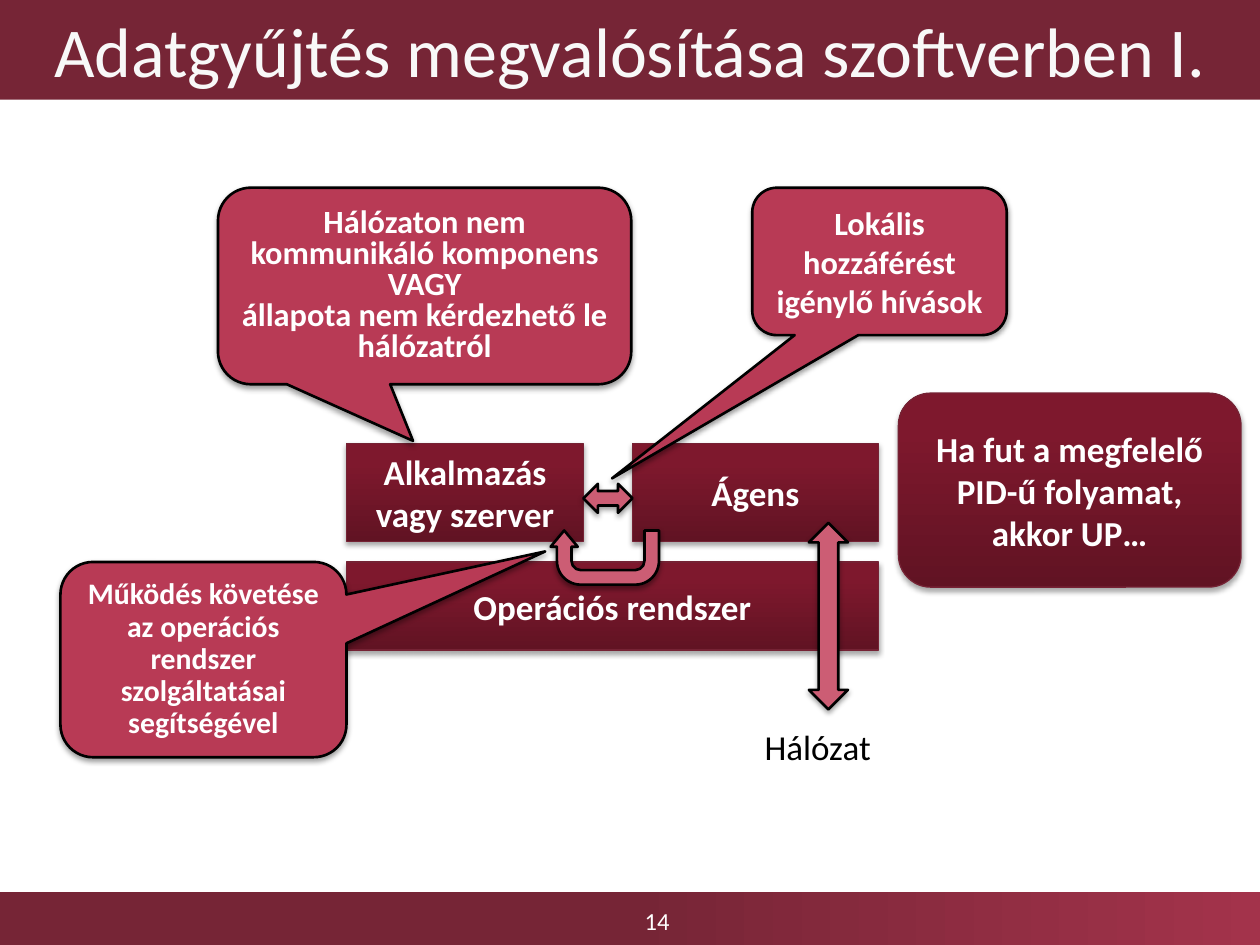
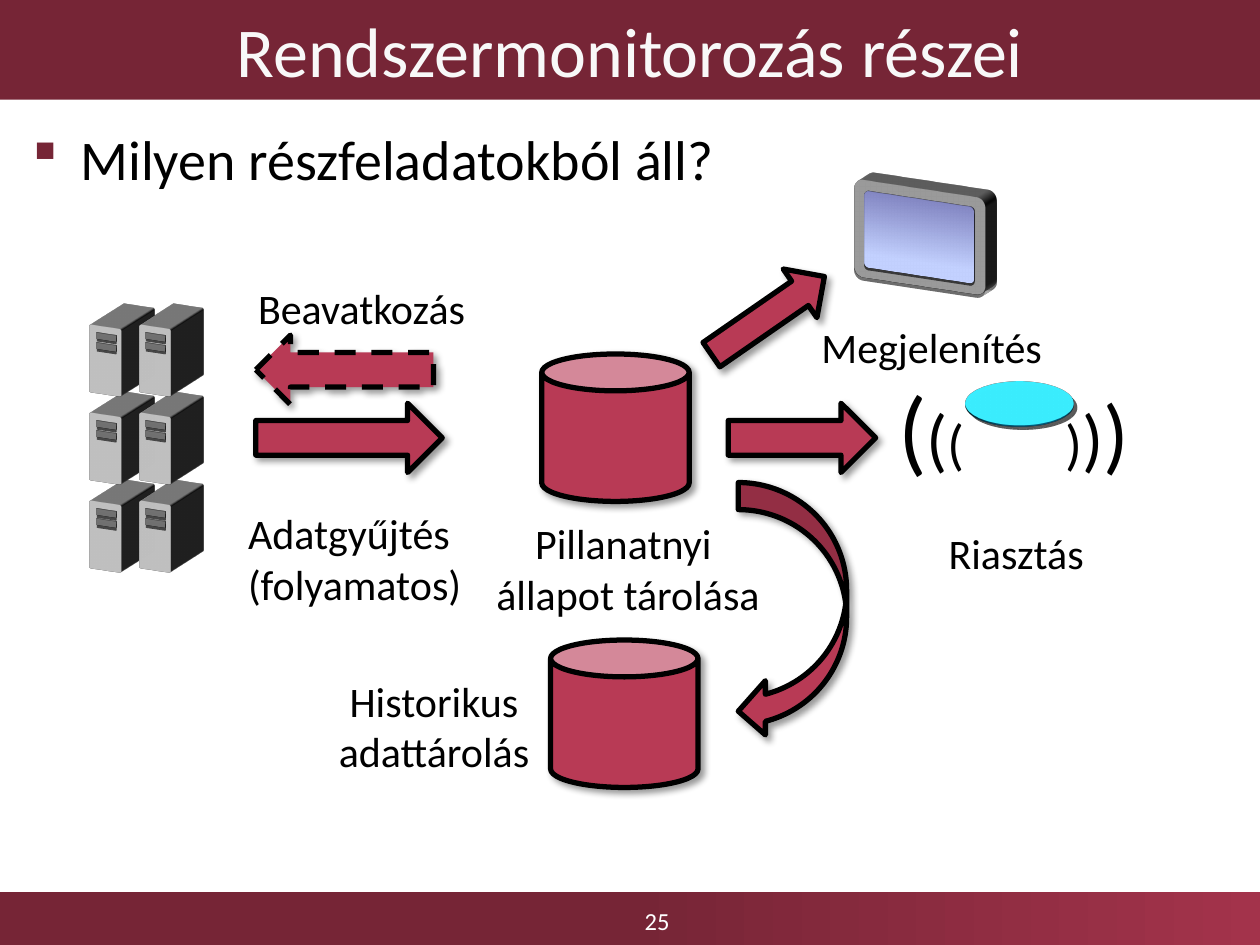
from collections import namedtuple

from lxml.etree import SubElement
from pptx import Presentation
from pptx.dml.color import RGBColor
from pptx.enum.dml import MSO_LINE
from pptx.enum.shapes import MSO_SHAPE as Kind
from pptx.enum.text import MSO_ANCHOR as Anchor, PP_ALIGN as Align
from pptx.oxml.ns import qn
from pptx.util import Inches, Pt

FONT = "Calibri"
WINE = RGBColor(0x76, 0x25, 0x36)
WINE_LIGHT = RGBColor(0xA3, 0x33, 0x4B)
BLOCK_LOW = RGBColor(0x61, 0x13, 0x23)
BLOCK_MID = RGBColor(0x7E, 0x18, 0x2D)
BLOCK_TOP = RGBColor(0x81, 0x16, 0x2D)
BLOCK_EDGE = RGBColor(0x75, 0x22, 0x34)
ROSE = RGBColor(0xB8, 0x3A, 0x55)
PINK = RGBColor(0xCC, 0x5D, 0x74)
BLACK = RGBColor(0, 0, 0)
WHITE = RGBColor(0xFF, 0xFF, 0xFF)
OFF_WHITE = RGBColor(0xF8, 0xF8, 0xF8)
CASE_GREY = RGBColor(0xA6, 0xA6, 0xA6)
SLOT_GREY = RGBColor(0x59, 0x59, 0x59)
FRAME_GREY = RGBColor(0x80, 0x80, 0x80)
SCREEN_TOP = RGBColor(0x84, 0x88, 0xC4)
SCREEN_LOW = RGBColor(0xC3, 0xD1, 0xFF)
LAMP_BLUE = RGBColor(0, 0xB0, 0xF0)

# opacity in percent, blur and distance in points, direction in degrees
BLOCK_SHADOW = (35, 3.1, 1.8, 90)
SOFT_SHADOW = (38, 3.1, 1.6, 90)
CORNER_SHADOW = (40, 4, 3, 45)

BLOCK_FILL = ([(0, BLOCK_LOW), (80, BLOCK_MID), (100, BLOCK_TOP)], 90)
BAND_FILL = ([(0, WINE), (50, WINE), (100, WINE_LIGHT)], 0)
SCREEN_FILL = ([(0, SCREEN_TOP), (83, SCREEN_LOW)], 270)

BLOCK = dict(fill=BLOCK_FILL, line=BLOCK_EDGE, weight=0.75, shadow=BLOCK_SHADOW)
CALLOUT = dict(fill=ROSE, line=BLACK, weight=1.5, shadow=SOFT_SHADOW)
SMALL_ARROW = dict(CALLOUT, fill=PINK)
FLOW = dict(fill=ROSE, line=BLACK, weight=3, shadow=CORNER_SHADOW)

# camera preset, latitude and longitude in degrees
SIDE_VIEW = ("isometricOffAxis2Left", 18, 26)
TILTED_VIEW = ("orthographicFront", 296, 0)


class Region(namedtuple("Region", "left top")):
    def at(self, left, top, width, height):
        return self.left + left, self.top + top, width, height


def paint(shape, fill, line=None, weight=1, shadow=None):
    if isinstance(fill, tuple) and not isinstance(fill, RGBColor):
        stops, angle = fill
        shape.fill.gradient()
        shape.fill.gradient_angle = angle
        stop_list = shape.fill._fill._gradFill.find(qn("a:gsLst"))
        for stop in list(stop_list):
            stop_list.remove(stop)
        for percent, colour in stops:
            stop = SubElement(stop_list, qn("a:gs"), pos=str(percent * 1000))
            SubElement(stop, qn("a:srgbClr"), val=str(colour))
    else:
        shape.fill.solid()
        shape.fill.fore_color.rgb = fill
    if line is None:
        shape.line.fill.background()
    else:
        shape.line.color.rgb = line
        shape.line.width = Pt(weight)
    shape.shadow.inherit = False
    if shadow:
        opacity, blur, distance, direction = shadow
        effects = shape._element.spPr.find(qn("a:effectLst"))
        outer = SubElement(effects, qn("a:outerShdw"), blurRad=str(Pt(blur)),
                           dist=str(Pt(distance)), dir=str(direction * 60000),
                           rotWithShape="0")
        colour = SubElement(outer, qn("a:srgbClr"), val=str(BLACK))
        SubElement(colour, qn("a:alpha"), val=str(opacity * 1000))


def extrude(shape, view, depth):
    """Turn the shape in space and give it a depth in points."""
    preset, latitude, longitude = view
    props = shape._element.spPr
    scene = SubElement(props, qn("a:scene3d"))
    camera = SubElement(scene, qn("a:camera"), prst=preset)
    SubElement(camera, qn("a:rot"), lat=str(latitude * 60000),
               lon=str(longitude * 60000), rev="0")
    SubElement(scene, qn("a:lightRig"), rig="threePt", dir="t")
    SubElement(props, qn("a:sp3d"), extrusionH=str(Pt(depth)))


def write(shape, text, size, colour=BLACK, bold=False, align=Align.CENTER,
          anchor=Anchor.MIDDLE, spacing=None, wrap=True):
    """Start a paragraph at each newline and a line at each vertical tab."""
    frame = shape.text_frame
    frame.word_wrap = wrap
    frame.vertical_anchor = anchor
    for index, content in enumerate(text.split("\n")):
        para = frame.add_paragraph() if index else frame.paragraphs[0]
        para.alignment = align
        if spacing:
            para.line_spacing = spacing
        for row, line in enumerate(content.split("\v")):
            if row:
                para.add_line_break()
            span = para.add_run()
            span.text = line
            style(span.font, size, colour, bold)


def style(font, size, colour=BLACK, bold=False):
    font.name = FONT
    font.size = Pt(size)
    font.bold = bold
    font.color.rgb = colour


def add_figure(page, kind, box, adjust=(), turn=0, **look):
    shape = page.shapes.add_shape(kind, *map(Inches, box))
    for index, value in enumerate(adjust):
        shape.adjustments[index] = value
    shape.rotation = turn
    paint(shape, **look)
    return shape


def add_label(page, box, text, size=24, **layout):
    label = page.shapes.add_textbox(*map(Inches, box))
    write(label, text, size, **dict(dict(anchor=Anchor.TOP, wrap=False), **layout))


def add_page(deck, title, number):
    page = deck.slides.add_slide(deck.slide_layouts[6])
    add_figure(page, Kind.RECTANGLE, (0, 7.08, 10, 0.42), fill=BAND_FILL)
    add_label(page, (3.59, 7.11, 3.25, 0.39), number, 14, colour=WHITE,
              anchor=Anchor.MIDDLE, wrap=True)
    heading = add_figure(page, Kind.RECTANGLE, (0, 0, 10, 0.79), fill=WINE)
    write(heading, title, 40, OFF_WHITE)
    return page


def add_block(page, box, text, kind=Kind.RECTANGLE):
    write(add_figure(page, kind, box, **BLOCK), text, 20, WHITE, bold=True)


def add_callout(page, box, tip, text, size=18.5, spacing=None):
    callout = add_figure(page, Kind.ROUNDED_RECTANGULAR_CALLOUT, box,
                         adjust=(*tip, 0.167), **CALLOUT)
    write(callout, text, size, WHITE, bold=True, spacing=spacing)


def draw_agent_stack(page, region):
    """Application and agent above the operating system, with callouts."""
    add_block(page, region.at(0, 0.94, 4.22, 0.7), "Operációs rendszer")
    add_block(page, region.at(0, 0, 1.88, 0.78), "Alkalmazás vagy szerver")
    add_block(page, region.at(2.27, 0, 1.95, 0.78), "Ágens")
    add_callout(page, region.at(-1.02, -2.03, 3.28, 1.56), (-0.028, 0.788),
                "Hálózaton nem kommunikáló komponens\nVAGY\n"
                "állapota nem kérdezhető le hálózatról", spacing=0.8)
    add_figure(page, Kind.LEFT_RIGHT_ARROW, region.at(1.88, 0.32, 0.39, 0.23),
               **SMALL_ARROW)
    add_figure(page, Kind.UP_DOWN_ARROW, region.at(3.67, 0.63, 0.31, 1.48),
               **SMALL_ARROW)
    add_label(page, region.at(3.22, 2.19, 1.06, 0.47), "Hálózat", 20, align=Align.LEFT)
    add_callout(page, region.at(3.22, -2.03, 2.02, 1.17), (-1.051, 1.472),
                "Lokális hozzáférést igénylő hívások")
    add_figure(page, Kind.U_TURN_ARROW, region.at(1.62, 0.69, 0.86, 0.43),
               adjust=(0.269, 0.25, 0.299, 0.438, 1), turn=180, **SMALL_ARROW)
    add_callout(page, region.at(-2.27, 0.94, 2.27, 1.55), (1.195, -0.554),
                "Működés követése az operációs rendszer szolgáltatásai "
                "segítségével", size=17, spacing=0.9)


def draw_server(page, region):
    server = page.shapes.add_group_shape()
    case = add_figure(server, Kind.ROUNDED_RECTANGLE, region.at(0, 0, 0.28, 0.56),
                      adjust=(0.06,), fill=CASE_GREY)
    extrude(case, SIDE_VIEW, 43)
    for top in (0.07, 0.15):
        slot = add_figure(server, Kind.RECTANGLE, region.at(0.06, top, 0.17, 0.05),
                          fill=SLOT_GREY, shadow=SOFT_SHADOW)
        extrude(slot, SIDE_VIEW, 1)


def draw_server_rack(page, region):
    for row in (2, 1, 0):
        for column in range(2):
            draw_server(page, Region(region.left + column * 0.39,
                                     region.top + row * 0.7))


def draw_monitor(page, region):
    monitor = page.shapes.add_group_shape()
    frame = add_figure(monitor, Kind.ROUNDED_RECTANGLE, region.at(0, 0, 1.16, 0.81),
                       adjust=(0.1,), fill=FRAME_GREY, shadow=BLOCK_SHADOW)
    extrude(frame, SIDE_VIEW, 15)
    screen = add_figure(monitor, Kind.ROUNDED_RECTANGLE,
                        region.at(0.09, 0.09, 0.97, 0.63), adjust=(0.06,),
                        fill=SCREEN_FILL, shadow=SOFT_SHADOW)
    extrude(screen, SIDE_VIEW, 1)


def draw_alarm(page, region):
    """A lamp between sound waves made of brackets."""
    lamp = add_figure(page, Kind.OVAL, region.at(0.63, -0.08, 0.86, 0.78),
                      fill=LAMP_BLUE, shadow=CORNER_SHADOW)
    extrude(lamp, TILTED_VIEW, 1)
    waves = page.shapes.add_textbox(*map(Inches, region.at(0, 0, 2.06, 1.01)))
    waves.text_frame.word_wrap = True
    para = waves.text_frame.paragraphs[0]
    tabs = SubElement(para._p.get_or_add_pPr(), qn("a:tabLst"))
    SubElement(tabs, qn("a:tab"), pos=str(Inches(1.33)), algn="l")
    for text, size in (("(", 54), ("(", 40), ("(\t)", 32), (")", 40), (")", 48)):
        span = para.add_run()
        span.text = text
        style(span.font, size)


def add_question(page, box, text):
    question = page.shapes.add_textbox(*map(Inches, box))
    para = question.text_frame.paragraphs[0]
    props = para._p.get_or_add_pPr()
    props.set("marL", str(Inches(0.38)))
    props.set("indent", str(Inches(-0.38)))
    SubElement(SubElement(props, qn("a:buClr")), qn("a:srgbClr"), val=str(WINE))
    SubElement(props, qn("a:buFont"), typeface="Wingdings", charset="2")
    SubElement(props, qn("a:buChar"), char="§")
    write(question, text, 32, align=Align.LEFT, anchor=Anchor.TOP)


def draw_data_flow(page, region):
    """Arrows, stores and labels between the servers and the outputs."""
    arrows = [
        (Kind.RIGHT_ARROW, (0, 1.01, 1.48, 0.55), 0),
        (Kind.RIGHT_ARROW, (3.52, 0.08, 1.09, 0.47), 325.3),
        (Kind.RIGHT_ARROW, (3.75, 1.01, 1.17, 0.55), 0),
        (Kind.CURVED_LEFT_ARROW, (3.83, 1.64, 0.86, 2.03), 0),
    ]
    for kind, box, turn in arrows:
        add_figure(page, kind, region.at(*box), turn=turn, **FLOW)
    feedback = add_figure(page, Kind.LEFT_ARROW, region.at(0, 0.47, 1.41, 0.55), **FLOW)
    feedback.line.dash_style = MSO_LINE.DASH
    for left, top in ((2.27, 0.62), (2.34, 2.89)):
        add_figure(page, Kind.CAN, region.at(left, top, 1.17, 1.17), **FLOW)
    labels = [
        ((-0.16, 1.79, 1.91, 0.91), "Adatgyűjtés\n(folyamatos)", Align.LEFT),
        ((1.8, 1.87, 2.31, 0.91), "Pillanatnyi \vállapot tárolása", Align.CENTER),
        ((4.38, 0.31, 1.97, 0.5), "Megjelenítés", Align.CENTER),
        ((5.39, 1.95, 1.29, 0.5), "Riasztás", Align.CENTER),
        ((0.55, 3.12, 1.73, 0.91), "Historikus\nadattárolás", Align.CENTER),
        ((-0.08, 0, 1.86, 0.5), "Beavatkozás", Align.LEFT),
    ]
    for box, text, align in labels:
        add_label(page, region.at(*box), text, align=align)


def main():
    deck = Presentation()
    deck.slide_width, deck.slide_height = Inches(10), Inches(7.5)

    collection = add_page(deck, "Adatgyűjtés megvalósítása szoftverben I.", "14")
    draw_agent_stack(collection, Region(2.75, 3.52))
    add_block(collection, (7.13, 3.12, 2.72, 1.54),
              "Ha fut a megfelelő PID-ű folyamat, akkor UP…", Kind.ROUNDED_RECTANGLE)

    monitoring = add_page(deck, "Rendszermonitorozás részei", "25")
    add_question(monitoring, (0.16, 0.94, 5.7, 0.78), "Milyen részfeladatokból áll?")
    draw_server_rack(monitoring, Region(0.7, 2.58))
    draw_monitor(monitoring, Region(6.72, 1.48))
    draw_alarm(monitoring, Region(7.03, 2.89))
    draw_data_flow(monitoring, Region(2.03, 2.19))

    deck.save("out.pptx")


if __name__ == "__main__":
    main()
